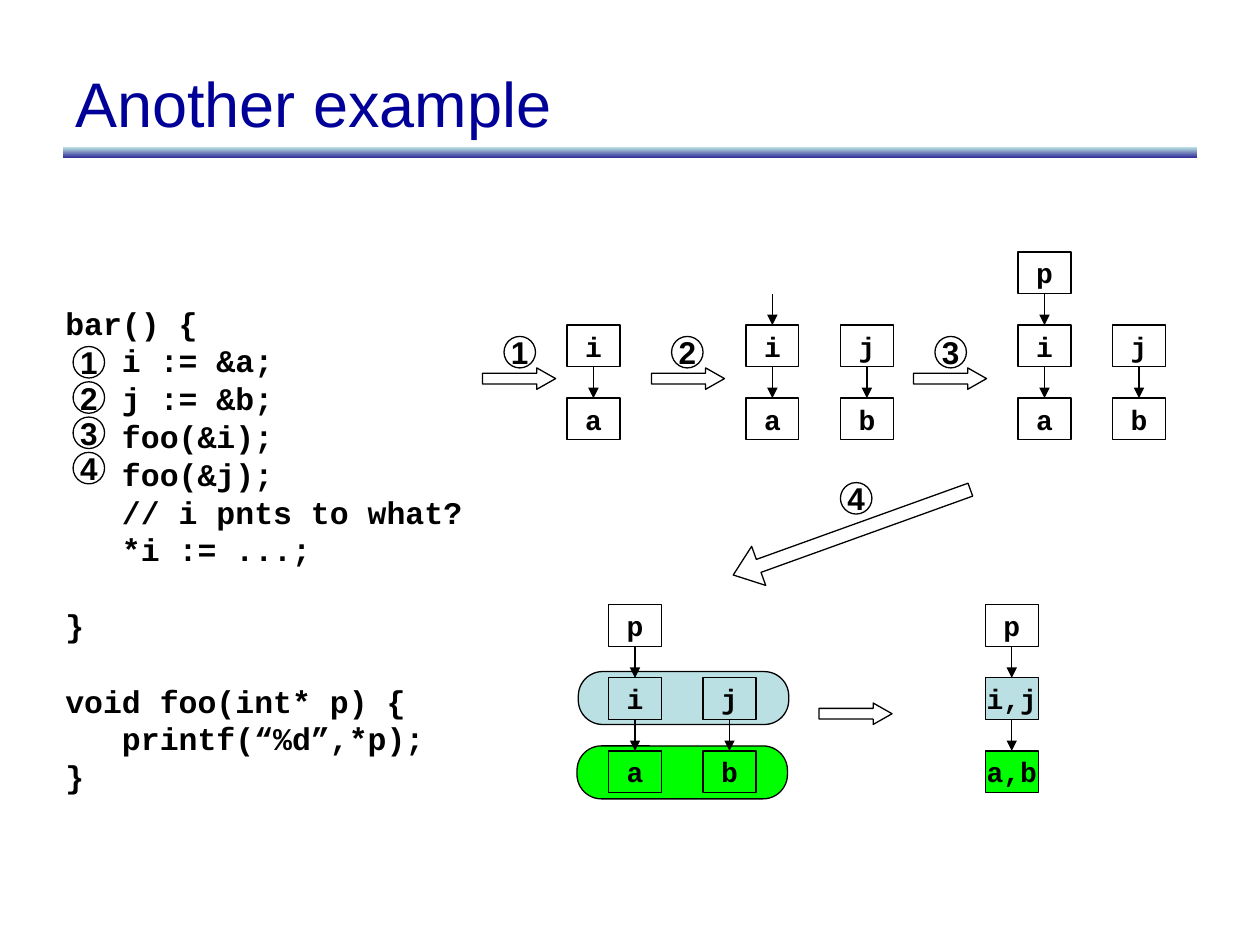
"""Build the "Another example" slide on merging points-to sets."""
from lxml import etree
from pptx import Presentation
from pptx import util as u
from pptx.dml.color import RGBColor
from pptx.enum import shapes, text
from pptx.oxml.ns import qn

BLACK = RGBColor(0x00, 0x00, 0x00)
NAVY = RGBColor(0x00, 0x00, 0x99)
INDIGO = RGBColor(0x33, 0x33, 0x99)
PALE_BLUE = RGBColor(0xBB, 0xE0, 0xE3)
GREEN = RGBColor(0x00, 0xFF, 0x00)

KIND = shapes.MSO_SHAPE
TITLE_FONT = {"name": "Arial", "size": u.Pt(36)}
CODE_FONT = {"name": "Courier New", "size": u.Pt(18), "bold": True}
CELL_FONT = {"name": "Courier New", "size": u.Pt(16), "bold": True}
STEP_FONT = {"name": "Arial", "size": u.Pt(18), "bold": True}
CENTRED = {"word_wrap": False, "vertical_anchor": text.MSO_ANCHOR.MIDDLE}

CELL_W, CELL_H, ROW_STEP = 0.42, 0.33, 0.58
LINE_PITCH = u.Pt(21.6)

prs = Presentation()
prs.slide_width, prs.slide_height = u.Inches(10), u.Inches(7.5)
slide = prs.slides.add_slide(prs.slide_layouts[6])


def add_figure(kind, left, top, width, height, fill=None, label="", font=CELL_FONT):
    figure = slide.shapes.add_shape(kind, *map(u.Inches, (left, top, width, height)))
    figure.shadow.inherit = False
    figure.line.color.rgb = BLACK
    figure.line.width = u.Pt(0.75)
    if fill is None:
        figure.fill.background()
    else:
        figure.fill.solid()
        figure.fill.fore_color.rgb = fill
    if label:
        for name, value in CENTRED.items():
            setattr(figure.text_frame, name, value)
        paragraph = figure.text_frame.paragraphs[0]
        paragraph.text = label
        paragraph.alignment = text.PP_ALIGN.CENTER
        paragraph.font.color.rgb = BLACK
        for name, value in font.items():
            setattr(paragraph.font, name, value)
    return figure


def add_pointer(target, source=None):
    x = target.left + target.width // 2
    pointer = slide.shapes.add_connector(
        shapes.MSO_CONNECTOR.STRAIGHT, x, target.top - u.Inches(0.25), x, target.top)
    if source is not None:
        pointer.begin_connect(source, 2)
    pointer.end_connect(target, 0)
    pointer.line.color.rgb = BLACK
    pointer.line.width = u.Pt(0.75)
    properties = pointer._element.spPr
    etree.SubElement(properties.find(qn("a:ln")), qn("a:tailEnd"), type="triangle")
    etree.SubElement(properties, qn("a:effectLst"))


rule = add_figure(KIND.RECTANGLE, 0.5, 1.17, 9, 0.08)
rule.line.fill.background()
rule.fill.gradient()
rule.fill.gradient_angle = 270
for stop, color in zip(rule.fill.gradient_stops, (PALE_BLUE, INDIGO)):
    stop.color.rgb = color

title = slide.shapes.add_textbox(*map(u.Inches, (0.5, 0.3, 9, 1.03)))
title.text_frame.word_wrap = True
title.text_frame.vertical_anchor = text.MSO_ANCHOR.MIDDLE
heading = title.text_frame.paragraphs[0]
heading.text = "Another example"
heading.font.color.rgb = NAVY
for name, value in TITLE_FONT.items():
    setattr(heading.font, name, value)

for left, top, color in ((4.58, 5.92, GREEN), (4.59, 5.33, PALE_BLUE)):
    merged = add_figure(KIND.ROUNDED_RECTANGLE, left, top, 1.67, 0.42, color)
    merged.adjustments[0] = 0.46

CODE = (
    ("bar() {", 0, 0),
    ("i := &a;", 1, 0),
    ("j := &b;", 1, 0),
    ("foo(&i);", 1, 0),
    ("foo(&j);", 1, 0),
    ("// i pnts to what?", 1, 0),
    ("*i := ...;", 1, 0),
    ("}", 0, 1),
    ("void foo(int* p) {", 0, 1),
    ("printf(“%d”,*p);", 1, 0),
    ("}", 0, 0),
)
listing = slide.shapes.add_textbox(*map(u.Inches, (0.42, 2.36, 3.5, 4.31))).text_frame
listing.word_wrap = True
for index, (code, depth, gap) in enumerate(CODE):
    line = listing.add_paragraph() if index else listing.paragraphs[0]
    line.text = code
    line.line_spacing = LINE_PITCH
    line.space_before = LINE_PITCH * gap
    line.font.color.rgb = BLACK
    line._p.get_or_add_pPr().set("marL", str(u.Inches(0.45) * depth))
    for name, value in CODE_FONT.items():
        setattr(line.font, name, value)

COLUMNS = (
    (4.83, 4.8, ("p", "i", "a"), {}),
    (5.58, 5.38, ("j", "b"), {}),
    (4.5, 2.58, ("i", "a"), {}),
    (5.92, 2.58, ("i", "a"), {}),
    (6.67, 2.58, ("j", "b"), {}),
    (8.08, 2, ("p", "i", "a"), {}),
    (8.83, 2.58, ("j", "b"), {}),
    (7.82, 4.8, ("p", "i,j", "a,b"), {"i,j": PALE_BLUE, "a,b": GREEN}),
)
for left, top, labels, fills in COLUMNS:
    above = None
    for row, label in enumerate(labels):
        cell = add_figure(KIND.RECTANGLE, left, top + row * ROW_STEP, CELL_W, CELL_H,
                          fills.get(label), label)
        if above is not None or left == 5.92 and row == 0:
            add_pointer(cell, above)
        above = cell

for left, top in ((3.83, 2.92), (5.17, 2.92), (7.25, 2.92), (6.5, 5.58)):
    transition = add_figure(KIND.RIGHT_ARROW, left, top, 0.58, 0.17)
    transition.adjustments[1] = 0.88

final_step = add_figure(KIND.RIGHT_ARROW, 5.76, 4.06, 2, 0.33)
final_step.rotation = 160.2
final_step.adjustments[0] = 0.33
final_step.adjustments[1] = 0.65

STEP_PLACES = ((4, 2.67), (5.33, 2.67), (7.42, 2.67), (6.67, 3.83))
for index, place in enumerate(STEP_PLACES):
    for left, top in ((0.58, 2.75 + index * 0.28), place):
        add_figure(KIND.OVAL, left, top, 0.25, 0.25, None, str(index + 1), STEP_FONT)

prs.save("out.pptx")
